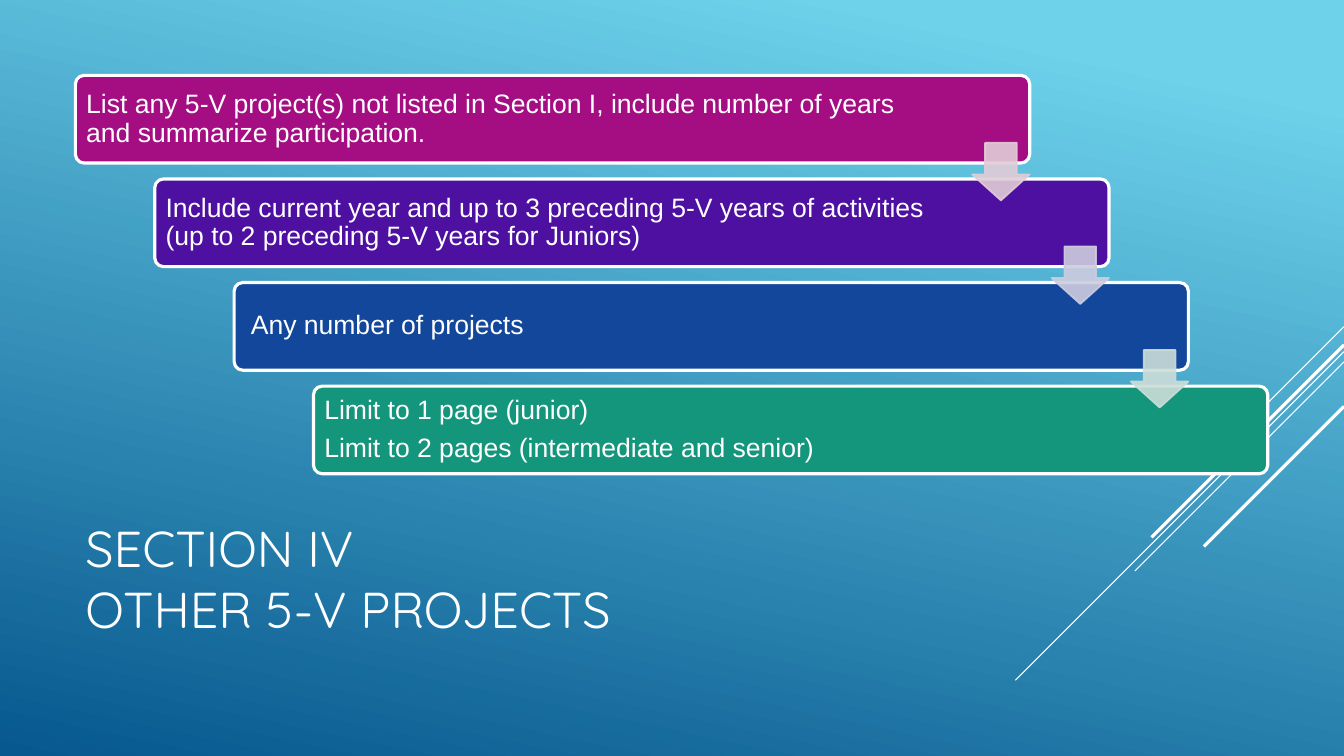
"""Build the Section IV slide: a staircase of four project rules."""
import pptx
import pptx.dml.color
import pptx.enum.shapes
import pptx.enum.text
import pptx.oxml.ns
import pptx.util
from pptx.util import Cm

WHITE = "FFFFFF"
SLIDE_WIDTH, SLIDE_HEIGHT = 33.87, 19.05
START = 1.9
STEP_X, STEP_Y = 2, 2.61
BOX_WIDTH, BOX_HEIGHT = 24.05, 2.21
ARROW_SIZE, ARROW_DROP = 1.45, 1.7

STEPS = [
    ("A50E82", 2.74, ["List any 5-V project(s) not listed in Section I, include number of years "
                      "and summarize participation."]),
    ("4D10A0", 3.71, ["Include current year and up to 3 preceding 5-V years of activities "
                      "(up to 2 preceding 5-V years for Juniors)"]),
    ("12479B", 3.71, [" Any number of projects"]),
    ("14967C", 3.71, ["Limit to 1 page (junior)", "Limit to 2 pages (intermediate and senior)"]),
]
ARROW_COLOURS = ["E1CCD8", "CDCCDF", "CCDDD8"]
DIAGONALS = [(8.23, 2.54, 0.75), (8.86, 8.28, 0.75), (9.12, 5.27, 0.75),
             (8.69, 4.85, 2.25), (10.24, 3.53, 2.25)]


def colour(value):
    return pptx.dml.color.RGBColor.from_string(value)


def paint_background(slide):
    fill = slide.background.fill
    fill.gradient()
    fill.gradient_angle = 258
    for stop, position, value in zip(fill.gradient_stops, (0.1, 1), ("6ED2EB", "06588E")):
        stop.position = position
        stop.color.rgb = colour(value)


def add_diagonal(slide, top, length, weight):
    line = slide.shapes.add_connector(
        pptx.enum.shapes.MSO_CONNECTOR.STRAIGHT,
        Cm(SLIDE_WIDTH), Cm(top), Cm(SLIDE_WIDTH - length), Cm(top + length))
    line.line.color.rgb = colour(WHITE)
    line.line.width = pptx.util.Pt(weight)
    properties = line.element.find(pptx.oxml.ns.qn("p:spPr"))
    properties.append(properties.makeelement(pptx.oxml.ns.qn("a:effectLst"), {}))


def format_paragraph(para, size, font):
    para.alignment = pptx.enum.text.PP_ALIGN.LEFT
    para.font.size = pptx.util.Pt(size)
    para.font.name = font
    para.font.color.rgb = colour(WHITE)


def set_title(slide, text):
    title = slide.shapes.title
    title.left, title.top, title.width, title.height = Cm(1.9), Cm(12.47), Cm(23.7), Cm(4.19)
    frame = title.text_frame
    frame.text = text
    frame.auto_size = pptx.enum.text.MSO_AUTO_SIZE.NONE
    frame.vertical_anchor = pptx.enum.text.MSO_ANCHOR.MIDDLE
    format_paragraph(frame.paragraphs[0], 36, "Quicksand")


def add_preset(slide, kind, position, size, adjustments, fill, line, weight):
    shape = slide.shapes.add_shape(kind, *map(Cm, position), *map(Cm, size))
    shape.shadow.inherit = False
    for index, value in enumerate(adjustments):
        shape.adjustments[index] = value
    shape.fill.solid()
    shape.fill.fore_color.rgb = colour(fill)
    shape.line.color.rgb = colour(line)
    shape.line.width = pptx.util.Pt(weight)
    return shape


def add_step(slide, left, top, fill, right_inset, lines):
    box = add_preset(slide, pptx.enum.shapes.MSO_SHAPE.ROUNDED_RECTANGLE, (left, top),
                     (BOX_WIDTH, BOX_HEIGHT), [0.1], fill, WHITE, 2.25)
    frame = box.text_frame
    frame.word_wrap = True
    frame.vertical_anchor = pptx.enum.text.MSO_ANCHOR.MIDDLE
    frame.margin_left = frame.margin_top = frame.margin_bottom = Cm(0.21)
    frame.margin_right = Cm(right_inset)
    frame.text = "\n".join(lines)
    for para in frame.paragraphs:
        format_paragraph(para, 19, "Arial")
        para.line_spacing = 0.9
        para.space_after = pptx.util.Pt(6.65)


def add_arrow(slide, left, top, value):
    arrow = add_preset(slide, pptx.enum.shapes.MSO_SHAPE.DOWN_ARROW, (left, top),
                       (ARROW_SIZE, ARROW_SIZE), [0.55, 0.45], value, value, 1.25)
    properties = arrow.element.find(pptx.oxml.ns.qn("p:spPr"))
    for tint in properties.iter(pptx.oxml.ns.qn("a:srgbClr")):
        tint.append(tint.makeelement(pptx.oxml.ns.qn("a:alpha"), {"val": "90000"}))


def main():
    deck = pptx.Presentation()
    deck.slide_width, deck.slide_height = Cm(SLIDE_WIDTH), Cm(SLIDE_HEIGHT)
    slide = deck.slides.add_slide(deck.slide_layouts[5])
    paint_background(slide)
    for diagonal in DIAGONALS:
        add_diagonal(slide, *diagonal)
    set_title(slide, "SECTION IV \vOTHER 5-V PROJECTS")
    corners = [(START + i * STEP_X, START + i * STEP_Y) for i in range(len(STEPS))]
    for (left, top), step in zip(corners, STEPS):
        add_step(slide, left, top, *step)
    for (left, top), value in zip(corners, ARROW_COLOURS):
        add_arrow(slide, left + BOX_WIDTH - ARROW_SIZE, top + ARROW_DROP, value)
    deck.save("out.pptx")


if __name__ == "__main__":
    main()
